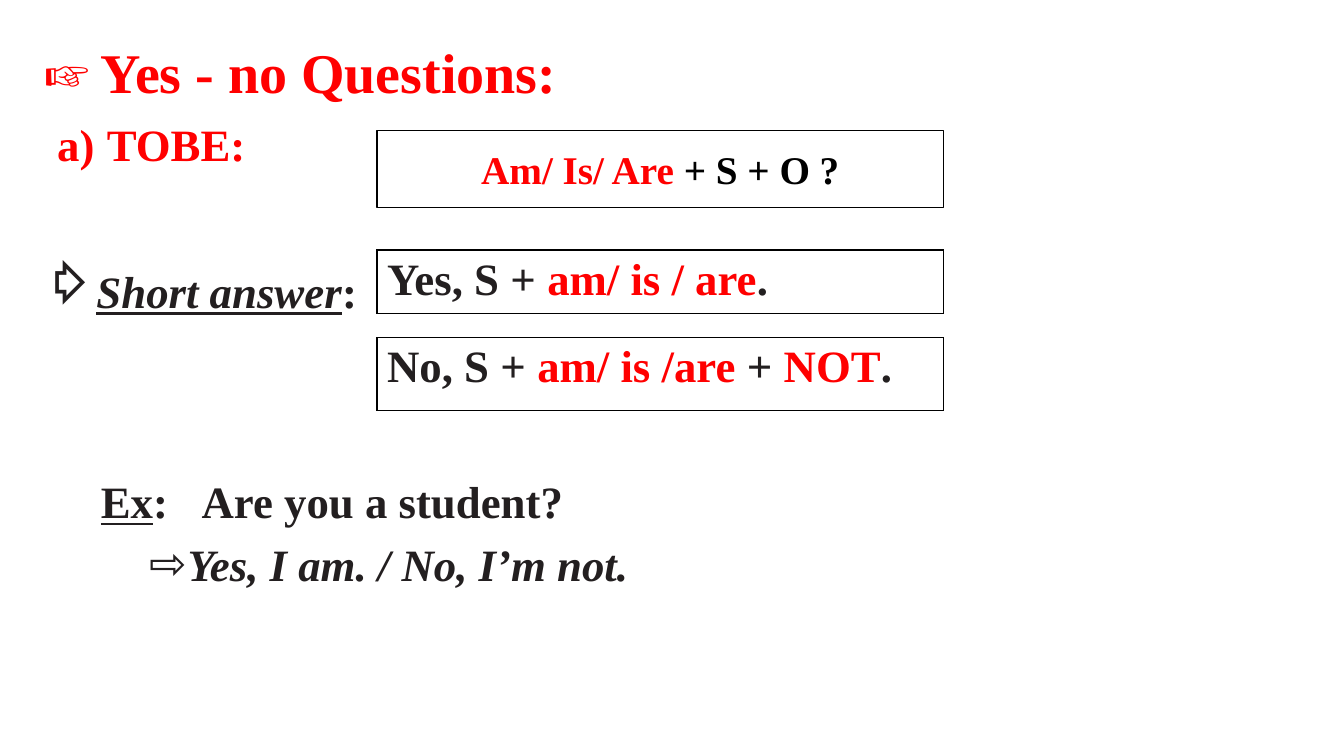
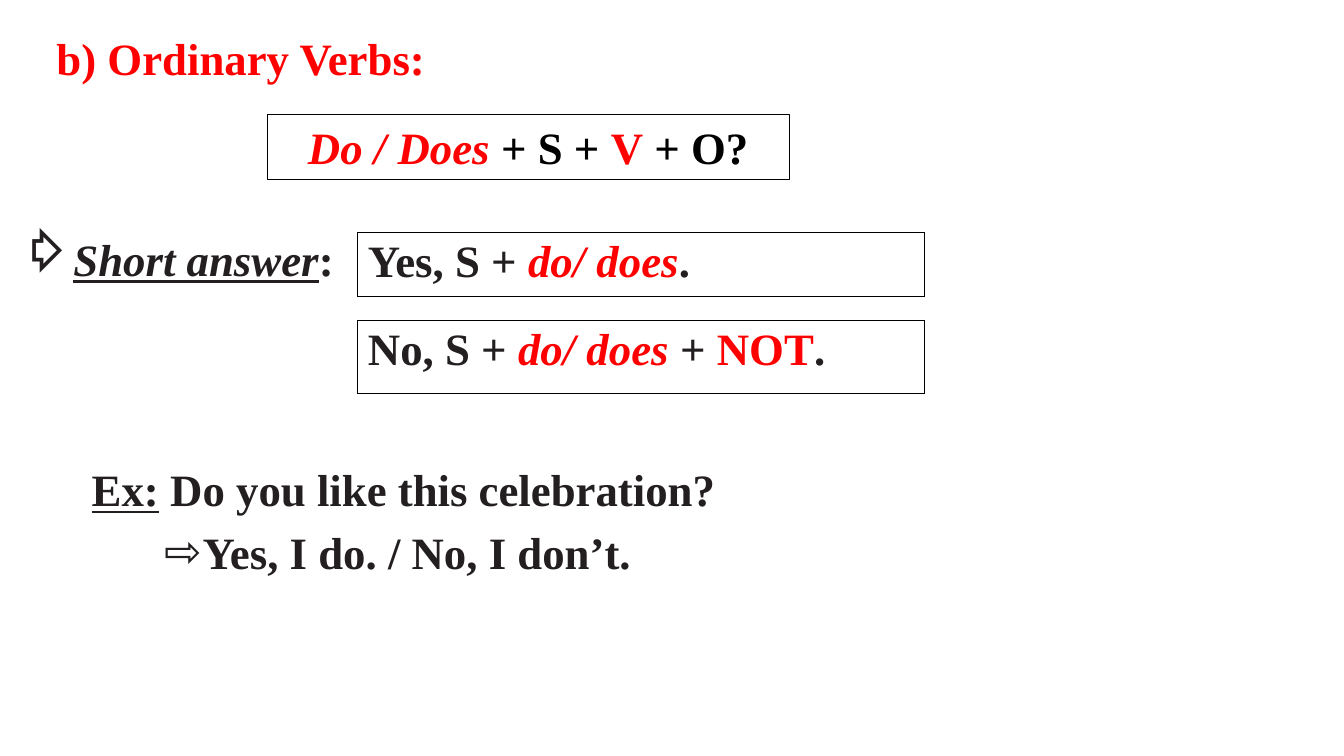
from lxml.etree import SubElement
from pptx import Presentation
from pptx.dml.color import RGBColor
from pptx.enum.shapes import MSO_SHAPE
from pptx.enum.text import MSO_ANCHOR, MSO_AUTO_SIZE, PP_ALIGN
from pptx.oxml.ns import qn
from pptx.util import Pt

COLORS = {"red": "FF0000", "ink": "231F20", "black": "000000", "white": "FFFFFF"}
FONT = "Times New Roman"
RED = {"color": "red"}
RED_ITALIC = {"color": "red", "italic": True}
BLACK = {"color": "black"}
UNDERLINED = {"underline": True}
ARROW = ("buChar", {"char": "⇨"})
LETTER = ("buAutoNum", {"type": "alphaLcParenR"})
NO_BULLET = ("buNone", {})
HANGING = 27.4


def rgb(name):
    return RGBColor.from_string(COLORS[name])


def write(paragraph, text, size=32, color="ink", italic=False, underline=False):
    run = paragraph.add_run()
    run.text = text
    font = run.font
    font.name, font.size, font.bold = FONT, Pt(size), True
    font.italic, font.underline = italic, underline
    font.color.rgb = rgb(color)


def write_runs(paragraph, runs, **shared):
    for text, style in runs:
        write(paragraph, text, **{**shared, **style})


def format_paragraph(paragraph, bullet=NO_BULLET, margin=0, hanging=0, after=0, tab=None):
    paragraph.line_spacing = 1.0
    paragraph.space_before, paragraph.space_after = Pt(0), Pt(after)
    properties = paragraph._p.get_or_add_pPr()
    properties.set("marL", str(Pt(margin)))
    properties.set("indent", str(Pt(-hanging)))
    tag, attributes = bullet
    SubElement(properties, qn(f"a:{tag}"), attributes)
    if tab:
        tabs = SubElement(properties, qn("a:tabLst"))
        SubElement(tabs, qn("a:tab"), pos=str(Pt(tab)), algn="l")


class GrammarDeck:
    def __init__(self):
        self.presentation = Presentation()
        self.presentation.slide_width = Pt(960)
        self.presentation.slide_height = Pt(540)
        self.slide = None

    def add_slide(self):
        self.slide = self.presentation.slides.add_slide(self.presentation.slide_layouts[1])

    def place(self, shape, left, top, width, height):
        """Position a text shape and return its top-anchored, wrapping frame."""
        shape.left, shape.top = Pt(left), Pt(top)
        shape.width, shape.height = Pt(width), Pt(height)
        frame = shape.text_frame
        frame.word_wrap = True
        frame.auto_size = MSO_AUTO_SIZE.NONE
        frame.vertical_anchor = MSO_ANCHOR.TOP
        return frame

    def title(self, text, left, top, width, height, size=32):
        frame = self.place(self.slide.shapes.title, left, top, width, height)
        paragraph = frame.paragraphs[0]
        paragraph.alignment = PP_ALIGN.LEFT
        write(paragraph, text, size=size, color="red")

    def bullet_line(self, runs, left, top, width, bullet=ARROW, hanging=HANGING):
        box = self.slide.shapes.add_textbox(0, 0, 0, 0)
        paragraph = self.place(box, left, top, width, 46).paragraphs[0]
        format_paragraph(paragraph, bullet, hanging, hanging)
        write_runs(paragraph, runs)

    def formula(self, runs, left, top, width, height, size=32):
        shape = self.slide.shapes.add_shape(MSO_SHAPE.RECTANGLE, 0, 0, 0, 0)
        shape.shadow.inherit = False
        shape.fill.solid()
        shape.fill.fore_color.rgb = rgb("white")
        shape.line.color.rgb = rgb("black")
        shape.line.width = Pt(0.75)
        frame = self.place(shape, left, top, width, height)
        frame.vertical_anchor = MSO_ANCHOR.MIDDLE
        paragraph = frame.paragraphs[0]
        paragraph.alignment = PP_ALIGN.CENTER
        write_runs(paragraph, runs, size=size)

    def answer_table(self, runs, left, top, height):
        width = 404.6
        table = self.slide.shapes.add_table(
            1, 1, Pt(left), Pt(top), Pt(width), Pt(height)).table
        table.first_row = table.horz_banding = False
        cell = table.cell(0, 0)
        properties = cell._tc.get_or_add_tcPr()
        for side in "LRTB":
            line = SubElement(properties, qn(f"a:ln{side}"), w=str(Pt(1)))
            fill = SubElement(line, qn("a:solidFill"))
            SubElement(fill, qn("a:srgbClr"), val=COLORS["black"])
        cell.fill.background()
        write_runs(cell.text_frame.paragraphs[0], runs)

    def short_answers(self, yes, no, label_left, label_top, left, top):
        label = [("Short answer", {"italic": True, "underline": True}), (":", {})]
        self.bullet_line(label, label_left, label_top, 255)
        self.answer_table(yes, left, top, 45.4)
        self.answer_table(no, left, top + 62.6, 52)

    def example(self, question, answer, left, top, indent, tab=None):
        frame = self.place(self.slide.placeholders[1], left, top, 720, 90)
        first, second = frame.paragraphs[0], frame.add_paragraph()
        format_paragraph(first, after=6.4, tab=tab)
        write_runs(first, question)
        format_paragraph(second, ARROW, indent, HANGING)
        write_runs(second, answer)


def main():
    deck = GrammarDeck()

    deck.add_slide()
    deck.title("☞ Yes - no Questions:", 24.5, 23, 600, 55.4, size=40)
    deck.bullet_line([("TOBE:", RED)], 33.8, 80, 235, bullet=LETTER, hanging=35.4)
    deck.formula([("Am/ Is/ Are ", RED), ("+ S + O ?", BLACK)],
                 269.3, 93, 404.6, 55.4, size=28)
    deck.short_answers(
        [("Yes, S + ", {}), ("am/ is / are", RED), (".", {})],
        [("No, S + ", {}), ("am/ is /are ", RED), ("+ ", {}), ("NOT", RED), (".", {})],
        24.5, 185, 269.3, 178.6)
    deck.example([("Ex", UNDERLINED), (":\tAre you a student?", {})],
                 [("Yes, I am. / No, I’m not.", {"italic": True})],
                 64.8, 335, 62, tab=70.4)

    deck.add_slide()
    deck.title("b) Ordinary Verbs:", 33.1, 18, 358, 46)
    deck.formula([("Do / Does ", RED_ITALIC), ("+ S + ", BLACK), ("V", RED), (" + O?", BLACK)],
                 190.8, 82, 373, 46)
    deck.short_answers(
        [("Yes, S + ", {}), ("do/ does", RED_ITALIC), (".", {})],
        [("No, S + ", {}), ("do/ does ", RED_ITALIC), ("+ ", {}), ("NOT", RED), (".", {})],
        8, 162, 255.6, 166.3)
    deck.example([("Ex:", UNDERLINED), (" Do you like this celebration?", {})],
                 [("Yes, I do. / No, I don’t.", {})],
                 58.3, 326.4, 79.2)

    deck.presentation.save("out.pptx")


if __name__ == "__main__":
    main()
